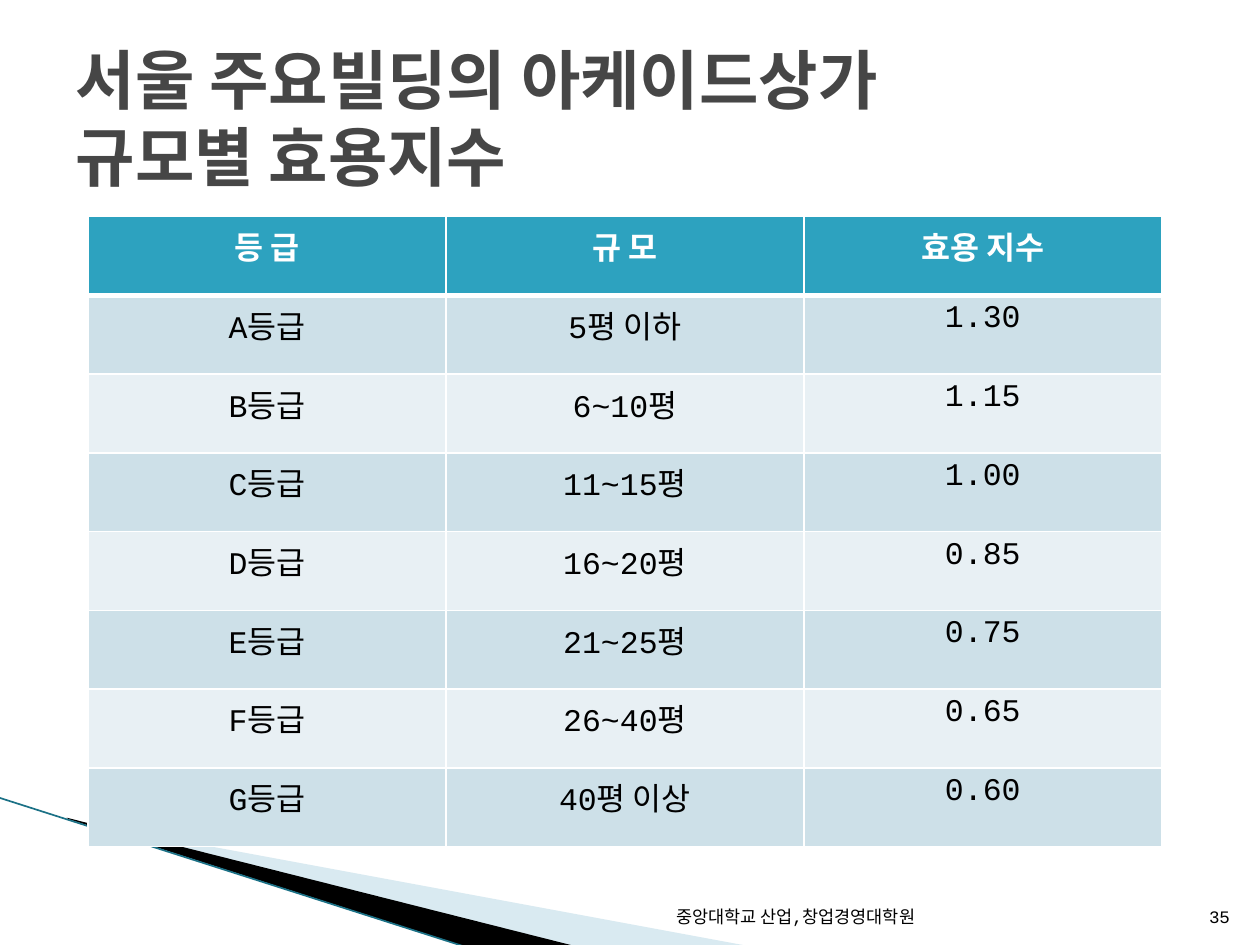
import pptx
import pptx.util
import pptx.dml.color
import pptx.enum.text
import pptx.enum.shapes
import pptx.oxml
import lxml.etree
from pptx.util import Inches

FONT = "Courier New"
Align = pptx.enum.text.PP_ALIGN
Anchor = pptx.enum.text.MSO_ANCHOR
tag = pptx.oxml.ns.qn


def color(code):
    return pptx.dml.color.RGBColor.from_string(code)


def write(para, text, size, code, bold=False):
    run = para.add_run()
    run.text = text
    run.font.name = FONT
    run.font.size = pptx.util.Pt(size)
    run.font.bold = bold
    run.font.color.rgb = color(code)


deck = pptx.Presentation()
deck.slide_width, deck.slide_height = Inches(10), Inches(7.5)
slide = deck.slides.add_slide(deck.slide_layouts[5])
shapes = slide.shapes

# Corner wedges: points, frame, fill, opacity in percent
wedges = [
    ([(0.55, 6.51), (5.95, 7.51), (4.56, 7.51), (0.55, 6.5)],
     (0.78, 5.47, 4.16, 1.58), "A0CBDC", 40),
    ([(0.53, 6.49), (4.57, 7.51), (3.72, 7.52), (0.54, 6.5)],
     (-0.06, 6.33, 4.16, 0.92), "000000", 100),
]
for points, area, code, solid in wedges:
    spots = [(Inches(x), Inches(y)) for x, y in points]
    form = shapes.build_freeform(*spots[0])
    form.add_line_segments(spots[1:], close=True)
    wedge = form.convert_to_shape()
    wedge.shadow.inherit = False
    wedge.fill.solid()
    wedge.fill.fore_color.rgb = color(code)
    wedge.line.fill.background()
    # The outline reaches beyond its frame
    left, top, width, height = [Inches(n) for n in area]
    trace = wedge._element.find(".//" + tag("a:path"))
    trace.set("w", str(width))
    trace.set("h", str(height))
    for spot in trace.iter(tag("a:pt")):
        spot.set("x", str(int(spot.get("x")) + wedge.left - left))
        spot.set("y", str(int(spot.get("y")) + wedge.top - top))
    wedge.left, wedge.top, wedge.width, wedge.height = left, top, width, height
    if solid < 100:
        tint = wedge._element.spPr.find(".//" + tag("a:srgbClr"))
        lxml.etree.SubElement(tint, tag("a:alpha"), val=str(solid * 1000))

# Corner edge line
edge = shapes.add_connector(
    pptx.enum.shapes.MSO_CONNECTOR.STRAIGHT,
    Inches(-0.01), Inches(6.33), Inches(3.71), Inches(7.52))
edge.line.color.rgb = color("1B7186")
edge.line.width = pptx.util.Pt(0.95)
lxml.etree.SubElement(edge._element.spPr, tag("a:effectLst"))

# Title
title = shapes.title
title.left, title.top = Inches(0.5), Inches(0.3)
title.width, title.height = Inches(9), Inches(1.26)
frame = title.text_frame
frame.word_wrap = True
frame.auto_size = pptx.enum.text.MSO_AUTO_SIZE.NONE
frame.vertical_anchor = Anchor.MIDDLE
para = frame.paragraphs[0]
para.alignment = Align.LEFT
write(para, "서울 주요빌딩의 아케이드상가", 36.9, "464646", True)
para.add_line_break()
write(para, "규모별 효용지수", 36.9, "464646", True)

# Table of grades; the first two heads hold a wide (en) space
rows = [
    ("등 급", "규 모", "효용 지수"),
    ("A등급", "5평 이하", "1.30"),
    ("B등급", "6~10평", "1.15"),
    ("C등급", "11~15평", "1.00"),
    ("D등급", "16~20평", "0.85"),
    ("E등급", "21~25평", "0.75"),
    ("F등급", "26~40평", "0.65"),
    ("G등급", "40평 이상", "0.60"),
]
table = shapes.add_table(len(rows), 3, Inches(0.7), Inches(1.72),
                         Inches(8.52), Inches(5)).table
for r, row in enumerate(rows):
    head = r == 0
    back = "2DA2BF" if head else ("E8F0F4", "CDE0E8")[r % 2]
    for c, text in enumerate(row):
        cell = table.cell(r, c)
        para = cell.text_frame.paragraphs[0]
        para.alignment = Align.CENTER
        write(para, text, 18, "FFFFFF" if head else "000000", head)
        # Borders go before the fill; the rule under the header is thick
        props = cell._tc.get_or_add_tcPr()
        for side in "LRTB":
            thick = (head and side == "B") or (r == 1 and side == "T")
            width = pptx.util.Pt(3 if thick else 1)
            line = lxml.etree.SubElement(props, tag("a:ln" + side), w=str(width))
            paint = lxml.etree.SubElement(line, tag("a:solidFill"))
            lxml.etree.SubElement(paint, tag("a:srgbClr"), val="FFFFFF")
        cell.fill.solid()
        cell.fill.fore_color.rgb = color(back)

# Page number and footer
for left, width, text in [(9.46, 0.4, "35"),
                          (4.79, 2.57, "중앙대학교 산업,창업경영대학원")]:
    box = shapes.add_textbox(Inches(left), Inches(7.01), Inches(width), Inches(0.4))
    frame = box.text_frame
    frame.word_wrap = True
    frame.vertical_anchor = Anchor.BOTTOM
    para = frame.paragraphs[0]
    para.alignment = Align.RIGHT
    write(para, text, 10, "000000")

deck.save("out.pptx")
